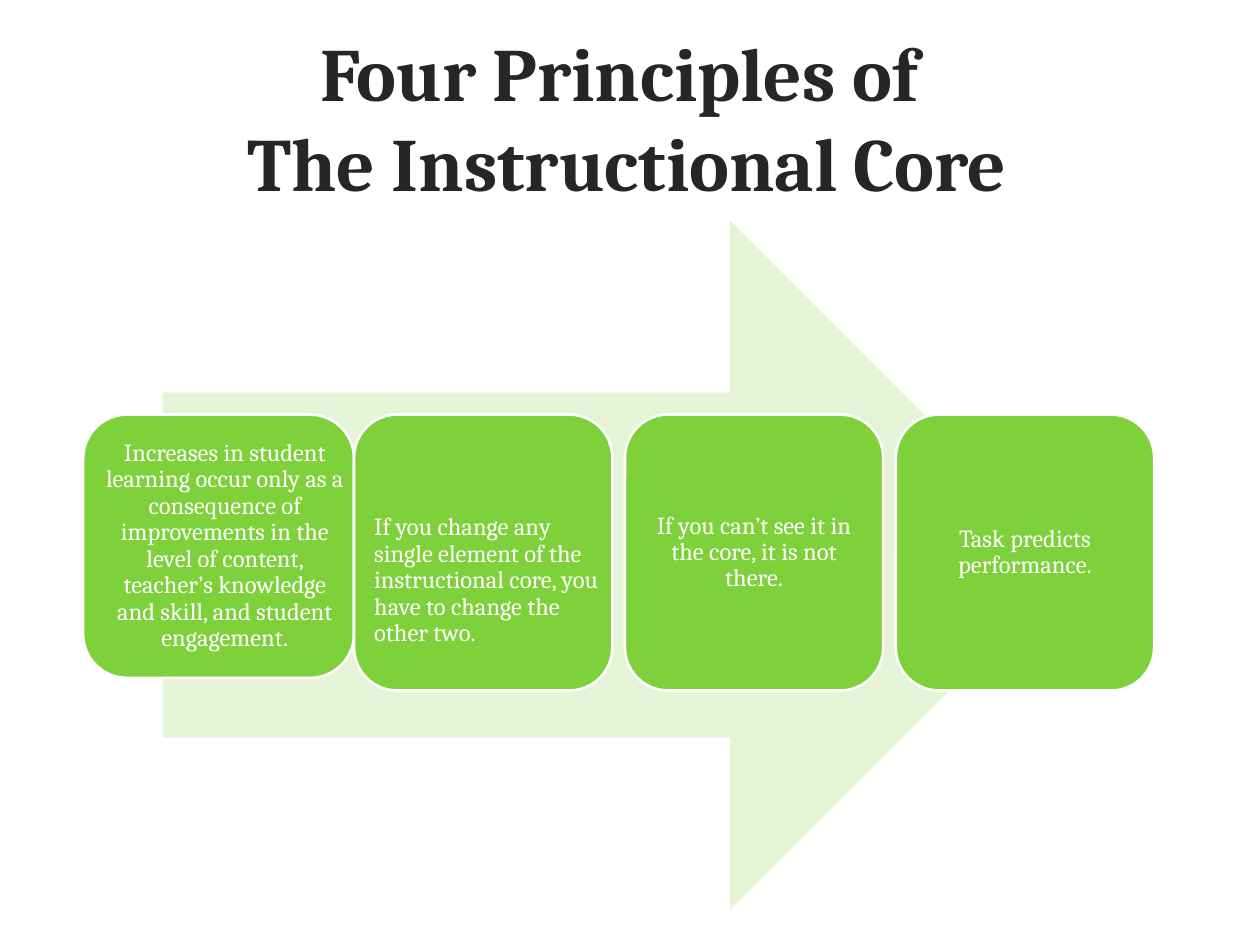
from pptx import Presentation
from pptx import util as u
from pptx.dml.color import RGBColor
from pptx.enum import shapes, text

FONT = "Cambria"
GREEN, PALE_GREEN, WHITE, DARK = "7FD13B", "E5F3D7", "FFFFFF", "262626"
LEFT, TOP, PITCH = 0.66, 3.29, 2.15
CARD_WIDTH, CARD_HEIGHT, PADDING = 2.05, 2.19, 0.1
CENTER, START = text.PP_ALIGN.CENTER, text.PP_ALIGN.LEFT

# wording, alignment, card size, text top offset, text size
PRINCIPLES = [
    ("Increases in student learning occur only as a consequence of improvements "
     "in the level of content, teacher’s knowledge and skill, and student engagement.",
     CENTER, (PITCH, 2.09), -0.05, (2.05, 2.19)),
    ("If you change any single element of the instructional core, "
     "you have to change the other two.",
     START, (CARD_WIDTH, CARD_HEIGHT), PADDING, (1.95, 2.44)),
    ("If you can’t see it in the core, it is not there.",
     CENTER, (CARD_WIDTH, CARD_HEIGHT), PADDING, (1.85, 1.99)),
    ("Task predicts performance.",
     CENTER, (CARD_WIDTH, CARD_HEIGHT), PADDING, (1.85, 1.99)),
]


def color(value):
    return RGBColor.from_string(value)


def inches(*lengths):
    return [u.Inches(length) for length in lengths]


def format_text(frame, alignment, size, font_color, bold=False):
    frame.word_wrap = True
    frame.auto_size = text.MSO_AUTO_SIZE.NONE
    frame.vertical_anchor = text.MSO_ANCHOR.MIDDLE
    for paragraph in frame.paragraphs:
        paragraph.alignment = alignment
        for run in paragraph.runs:
            run.font.name = FONT
            run.font.size = u.Pt(size)
            run.font.bold = bold
            run.font.color.rgb = color(font_color)


def add_title(slide, wording):
    title = slide.shapes.title
    title.left, title.top, title.width, title.height = inches(1.08, 0.42, 7.79, 1.01)
    title.text_frame.text = wording
    format_text(title.text_frame, CENTER, 43, DARK, bold=True)


def add_block(slide, kind, box, fill, line=None):
    shape = slide.shapes.add_shape(kind, *inches(*box))
    shape.shadow.inherit = False
    shape.fill.solid()
    shape.fill.fore_color.rgb = color(fill)
    if line:
        shape.line.color.rgb = color(line)
        shape.line.width = u.Pt(1.5)
    else:
        shape.line.fill.background()


def add_label(slide, wording, alignment, box):
    frame = slide.shapes.add_textbox(*inches(*box)).text_frame
    frame.text = wording
    format_text(frame, alignment, 14, WHITE)
    frame.margin_left = frame.margin_right = u.Inches(0.06)
    frame.margin_top = frame.margin_bottom = u.Inches(0.06)
    paragraph = frame.paragraphs[0]
    paragraph.line_spacing = 0.9
    paragraph.space_after = u.Pt(4.9)


def main():
    presentation = Presentation()
    presentation.slide_width, presentation.slide_height = inches(10, 7.5)
    slide = presentation.slides.add_slide(presentation.slide_layouts[5])
    add_title(slide, "Four Principles of \vThe Instructional Core")
    add_block(slide, shapes.MSO_SHAPE.RIGHT_ARROW, (1.29, 1.75, 7.24, 5.47), PALE_GREEN)
    for column, (wording, alignment, card_size, offset, text_size) in enumerate(PRINCIPLES):
        left = LEFT + column * PITCH
        add_block(slide, shapes.MSO_SHAPE.ROUNDED_RECTANGLE,
                  (left, TOP, *card_size), GREEN, WHITE)
        add_label(slide, wording, alignment,
                  (left + PADDING, TOP + offset, *text_size))
    presentation.save("out.pptx")


if __name__ == "__main__":
    main()
